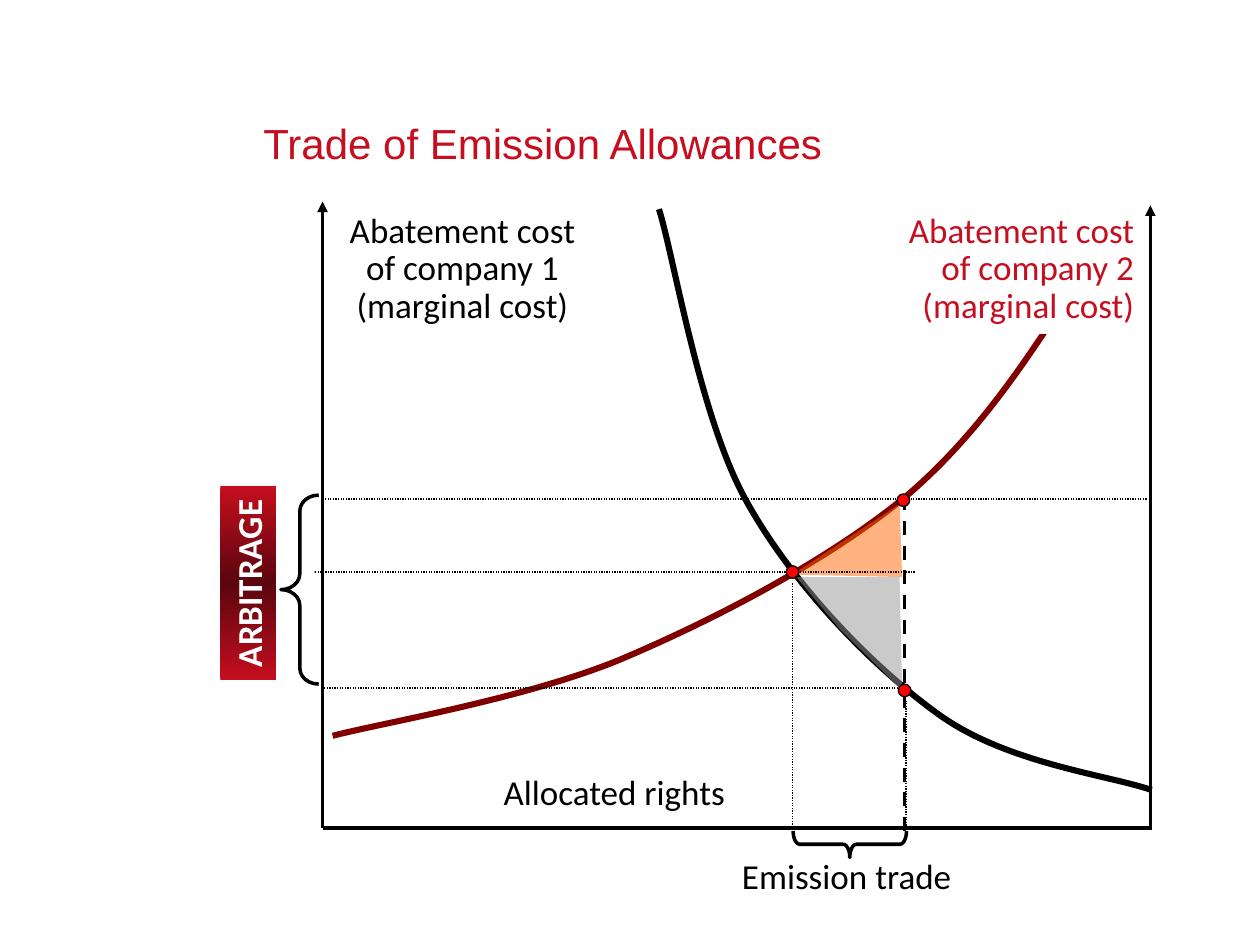
from dataclasses import dataclass

import lxml.etree
import pptx
import pptx.dml.color
import pptx.enum.dml
import pptx.enum.shapes
import pptx.enum.text
import pptx.oxml.ns
import pptx.util

Inches = pptx.util.Inches
Pt = pptx.util.Pt
MSO_SHAPE = pptx.enum.shapes.MSO_SHAPE
DASH = pptx.enum.dml.MSO_LINE
ALIGN = pptx.enum.text.PP_ALIGN
ANCHOR = pptx.enum.text.MSO_ANCHOR


@dataclass(frozen=True)
class Theme:
    """Colours, fonts and sizes used on the slide."""
    red: str = "C50E1F"
    deep_red: str = "5A060E"
    curve_red: str = "800000"
    dot: str = "FF0000"
    gain: str = "FF6600"
    saving: str = "969696"
    black: str = "000000"
    white: str = "FFFFFF"
    title_font: str = "Arial"
    label_font: str = "Calibri"
    title_size: int = 24
    label_size: int = 20
    axis: float = 2
    curve: float = 3.5
    hairline: float = 0.75


@dataclass(frozen=True)
class Box:
    """A region in inches whose parts are measured from its top left."""
    left: float
    top: float
    width: float
    height: float

    def at(self, x, y):
        """Return a point of the region as slide lengths."""
        return Inches(self.left + x), Inches(self.top + y)

    def inner(self, x, y, width, height):
        """Return a smaller region inside this one."""
        return Box(self.left + x, self.top + y, width, height)

    def frame(self):
        """Return position and size as slide lengths."""
        return *self.at(0, 0), Inches(self.width), Inches(self.height)


THEME = Theme()


def rgb(code):
    """Return a colour from its hex code."""
    return pptx.dml.color.RGBColor.from_string(code)


def child(parent, tag, **attributes):
    """Append a drawing element to a parent element."""
    return lxml.etree.SubElement(parent, pptx.oxml.ns.qn(tag), **attributes)


def style(shape, fill=None, line=None, width=THEME.hairline):
    """Set the fill and outline of a shape and drop its shadow."""
    shape.shadow.inherit = False
    if fill:
        shape.fill.solid()
        shape.fill.fore_color.rgb = rgb(fill)
    else:
        shape.fill.background()
    if line:
        shape.line.color.rgb = rgb(line)
        shape.line.width = Pt(width)
    else:
        shape.line.fill.background()
    return shape


def write(shape, text, color, align, spacing, font=THEME.label_font,
          size=THEME.label_size, bold=False):
    """Write one run of text into a shape."""
    paragraph = shape.text_frame.paragraphs[0]
    paragraph.alignment = align
    paragraph.line_spacing = spacing
    run = paragraph.add_run()
    run.text = text
    run.font.name = font
    run.font.size = Pt(size)
    run.font.bold = bold
    run.font.color.rgb = rgb(color)


def add_label(slide, box, text):
    """Add a centred label without a panel."""
    label = slide.shapes.add_textbox(*box.frame())
    label.text_frame.word_wrap = True
    write(label, text, THEME.black, ALIGN.CENTER, 1.1)


def add_panel(slide, box, text, color, align):
    """Add a label on a white panel."""
    panel = style(slide.shapes.add_shape(MSO_SHAPE.RECTANGLE, *box.frame()), THEME.white)
    panel.text_frame.word_wrap = True
    panel.text_frame.vertical_anchor = ANCHOR.TOP
    write(panel, text, color, align, 0.9)


def add_line(slide, box, start, end, width, dash=None, arrow=False):
    """Add a straight black line between two points of a region."""
    line = slide.shapes.add_connector(
        pptx.enum.shapes.MSO_CONNECTOR.STRAIGHT, *box.at(*start), *box.at(*end))
    line.line.color.rgb = rgb(THEME.black)
    line.line.width = Pt(width)
    if dash:
        line.line.dash_style = dash
    if arrow:
        child(line.line._get_or_add_ln(), "a:tailEnd", type="triangle")
    child(line._element.spPr, "a:effectLst")


def add_outline(slide, box, points, close=False):
    """Add a freeform through points of a region."""
    first, *rest = [box.at(*point) for point in points]
    builder = slide.shapes.build_freeform(*first)
    builder.add_line_segments(rest, close=close)
    return builder.convert_to_shape()


def add_curve(slide, box, points, color):
    """Add a chain of cubic curves, three points to each segment."""
    curve = style(add_outline(slide, box, points), line=color, width=THEME.curve)
    segments = list(curve._element.iter(pptx.oxml.ns.qn("a:lnTo")))
    outline = segments[0].getparent()
    for i in range(0, len(segments), 3):
        cubic = child(outline, "a:cubicBezTo")
        for segment in segments[i:i + 3]:
            cubic.append(segment[0])
            outline.remove(segment)


def add_brace(slide, box, curl, rotation=0):
    """Add a left brace, turned if needed."""
    brace = style(slide.shapes.add_shape(MSO_SHAPE.LEFT_BRACE, *box.frame()),
                  line=THEME.black, width=THEME.axis)
    brace.adjustments[0] = curl
    brace.rotation = rotation


def build_title(slide, box):
    """Place the slide title."""
    title = slide.shapes.title
    title.left, title.top, title.width, title.height = box.frame()
    frame = title.text_frame
    frame.margin_left = frame.margin_right = frame.margin_top = frame.margin_bottom = 0
    frame.vertical_anchor = ANCHOR.BOTTOM
    frame.word_wrap = True
    write(title, "Trade of Emission Allowances", THEME.red, ALIGN.LEFT, Pt(30),
          THEME.title_font, THEME.title_size)


def build_curves(slide, box):
    """Draw both cost curves with their labels."""
    company_2 = [(6.11, 0.64), (5.7, 1.28), (5.3, 1.92), (4.69, 2.44), (4.07, 2.95),
                 (3.17, 3.42), (2.41, 3.74), (1.65, 4.05), (0.52, 4.24), (0.14, 4.34)]
    company_1 = [(2.73, 0.16), (2.85, 0.54), (3.05, 1.8), (3.42, 2.47), (3.79, 3.14),
                 (4.42, 3.79), (4.95, 4.17), (5.49, 4.56), (6.29, 4.65), (6.64, 4.77)]
    add_curve(slide, box, company_2, THEME.curve_red)
    add_curve(slide, box, company_1, THEME.black)
    add_panel(slide, box.inner(4.37, 0.14, 2.23, 1.01),
              "Abatement cost of company 2 (marginal cost)", THEME.red, ALIGN.RIGHT)
    add_panel(slide, box.inner(0.04, 0.14, 2.26, 1.57),
              "Abatement cost of company 1 (marginal cost)", THEME.black, ALIGN.CENTER)
    add_label(slide, box.inner(0.86, 4.53, 3.03, 0.57), "Allocated rights")


def build_areas(slide, box):
    """Shade the gains from trade on both sides of the price."""
    saving = [(3.82, 3.08), (4.64, 3.08), (4.66, 3.98), (4.17, 3.5)]
    gain = [(3.82, 3.04), (4.64, 2.5), (4.66, 3.08), (3.78, 3.06)]
    for points, color, close in ((saving, THEME.saving, True), (gain, THEME.gain, False)):
        area = style(add_outline(slide, box, points, close), fill=color)
        solid = area._element.spPr.find(pptx.oxml.ns.qn("a:solidFill"))
        child(solid[0], "a:alpha", val="50000")


def build_axes(slide, box):
    """Draw guides, axes and the marked points."""
    guides = [((4.76, 3.04), (-0.01, 3.04)), ((6.6, 2.46), (0.08, 2.46)),
              ((4.73, 3.96), (0.06, 3.96)), ((3.79, 3.13), (3.79, 5.13)),
              ((4.69, 4.06), (4.69, 5.06))]
    for start, end in guides:
        add_line(slide, box, start, end, THEME.hairline, DASH.ROUND_DOT)
    add_line(slide, box, (4.68, 2.44), (4.68, 5.14), THEME.axis, DASH.DASH)
    add_line(slide, box, (0.06, 5.07), (6.62, 5.07), THEME.axis)
    add_line(slide, box, (0.06, 5.07), (0.06, 0.1), THEME.axis, arrow=True)
    add_line(slide, box, (6.63, 5.09), (6.63, 0.13), THEME.axis, arrow=True)
    for x, y in ((4.62, 2.42), (4.63, 3.93), (3.74, 2.99)):
        dot = slide.shapes.add_shape(MSO_SHAPE.OVAL, *box.inner(x, y, 0.1, 0.1).frame())
        style(dot, THEME.dot, THEME.black)


def build_emission_trade(slide, box):
    """Mark the traded quantity below the axis."""
    add_brace(slide, box.inner(1.14, -0.25, 0.21, 0.9), 0.25, 270)
    add_label(slide, box.inner(0.02, 0.2, 2.4, 0.47), "Emission trade")


def build_arbitrage(slide, box):
    """Mark the price gap beside the axis."""
    add_brace(slide, box.inner(1.03, 0.03, 0.3, 1.5), 0.419)
    tag = slide.shapes.add_shape(MSO_SHAPE.RECTANGLE, *box.inner(0, 0.51, 1.54, 0.44).frame())
    style(tag)
    tag.rotation = 270
    tag.fill.gradient()
    tag.fill.gradient_angle = 0
    stops = tag._element.spPr.find(pptx.oxml.ns.qn("a:gradFill"))[0]
    for stop in list(stops):
        stops.remove(stop)
    for position, color in ((0, THEME.red), (50000, THEME.deep_red), (100000, THEME.red)):
        child(child(stops, "a:gs", pos=str(position)), "a:srgbClr", val=color)
    tag.text_frame.word_wrap = False
    write(tag, "ARBITRAGE", THEME.white, ALIGN.CENTER, 1.0, bold=True)


def main():
    """Build and save the slide."""
    deck = pptx.Presentation()
    deck.slide_width, deck.slide_height = Inches(10), Inches(7.5)
    slide = deck.slides.add_slide(deck.slide_layouts[5])
    plot = Box(2.5, 1.5, 6.7, 5.1)
    build_title(slide, Box(2.09, 0.41, 7.41, 0.92))
    build_curves(slide, plot)
    build_areas(slide, plot)
    build_axes(slide, plot)
    build_emission_trade(slide, Box(5.5, 6.5, 2.5, 0.7))
    build_arbitrage(slide, Box(1.2, 3.9, 1.4, 1.6))
    deck.save("out.pptx")


if __name__ == "__main__":
    main()
